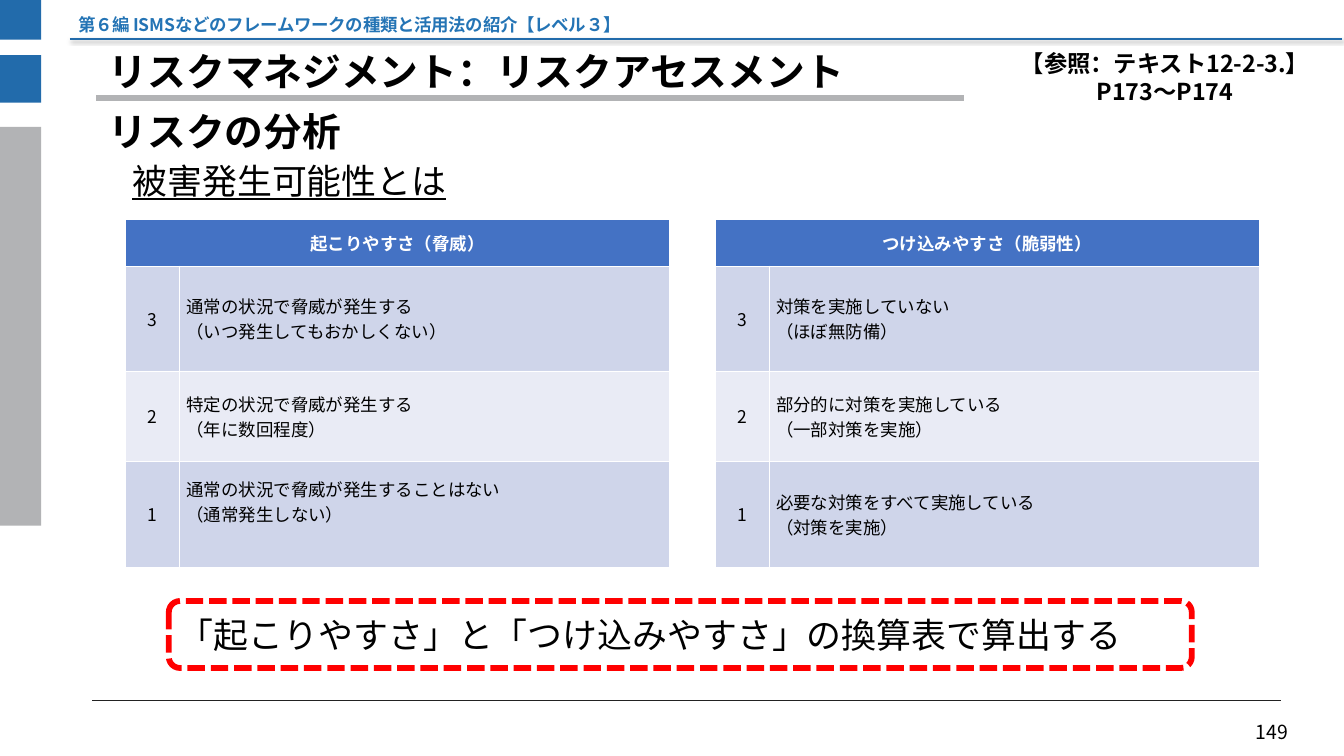
"""Builds the slide on risk analysis: likelihood of damage."""
import lxml.etree
import pptx
import pptx.dml.color
import pptx.enum.dml
import pptx.enum.shapes
import pptx.enum.text
import pptx.oxml
import pptx.oxml.ns
import pptx.util

Pt = pptx.util.Pt
RGB = pptx.dml.color.RGBColor
Align = pptx.enum.text.PP_ALIGN
Anchor = pptx.enum.text.MSO_ANCHOR
Shape = pptx.enum.shapes.MSO_SHAPE
qn = pptx.oxml.ns.qn

FONT = "Noto Sans CJK JP"
BLACK = RGB(0x00, 0x00, 0x00)
WHITE = RGB(0xFF, 0xFF, 0xFF)
BLUE = RGB(0x22, 0x6B, 0xAB)
SKY = RGB(0x24, 0x74, 0xB5)
GREY = RGB(0xB2, 0xB3, 0xB5)
DARK = RGB(0x22, 0x22, 0x22)
RED = RGB(0xFF, 0x00, 0x00)
HEAD = RGB(0x44, 0x72, 0xC4)
BAND = RGB(0xCF, 0xD5, 0xEA)
PALE = RGB(0xE9, 0xEB, 0xF5)


def style(frame, text, size, color=BLACK, bold=False, align=Align.LEFT):
    frame.text = text
    para = frame.paragraphs[0]
    para.alignment = align
    font = para.font
    font.name, font.size, font.bold = FONT, Pt(size), bold
    font.color.rgb = color
    props = para._p.pPr.find(qn("a:defRPr"))
    lxml.etree.SubElement(props, qn("a:ea"), typeface=FONT)
    return para


def place(shape, left, top, width, height, anchor=Anchor.MIDDLE):
    shape.left, shape.top = Pt(left), Pt(top)
    shape.width, shape.height = Pt(width), Pt(height)
    frame = shape.text_frame
    frame.word_wrap = True
    frame.auto_size = pptx.enum.text.MSO_AUTO_SIZE.NONE
    frame.vertical_anchor = anchor
    return frame


deck = pptx.Presentation()
deck.slide_width, deck.slide_height = Pt(1386.72), Pt(779.76)
slide = deck.slides.add_slide(deck.slide_layouts[5])
shapes = slide.shapes

for top, height, color in [(0, 41, BLUE), (56.9, 49, BLUE), (131, 411.1, GREY)]:
    bar = shapes.add_shape(Shape.RECTANGLE, 0, Pt(top), Pt(42.5), Pt(height))
    bar.shadow.inherit = False
    bar.fill.solid()
    bar.fill.fore_color.rgb = color
    bar.line.fill.background()

rules = [(72, 1384.6, 40.3, BLUE, 2), (95, 1322, 722.9, DARK, 1),
         (99.4, 994.3, 101.5, GREY, 6)]
for left, right, y, color, width in rules:
    rule = shapes.add_connector(pptx.enum.shapes.MSO_CONNECTOR.STRAIGHT,
                                Pt(left), Pt(y), Pt(right), Pt(y))
    rule.line.color.rgb = color
    rule.line.width = Pt(width)
    effect = lxml.etree.SubElement(rule._element.spPr, qn("a:effectLst"))
    if color == BLUE:
        shade = lxml.etree.SubElement(
            effect, qn("a:outerShdw"), blurRad=str(Pt(4)), dist=str(Pt(3)),
            dir="2700000", algn="tl", rotWithShape="0")
        tint = lxml.etree.SubElement(shade, qn("a:srgbClr"), val="000000")
        lxml.etree.SubElement(tint, qn("a:alpha"), val="40000")

frame = place(shapes.title, 105.1, 54.7, 1176.5, 43.9)
para = style(frame, "リスクマネジメント：リスクアセスメント", 40, bold=True)
para.line_spacing = 0.9

frame = place(shapes.add_textbox(0, 0, 0, 0), 105.1, 115.9, 1176.5, 43.9)
para = style(frame, "リスクの分析", 40, bold=True)
para.line_spacing = 0.9

frame = place(shapes.add_textbox(0, 0, 0, 0), 80.6, 20.2, 1258.6, 18, Anchor.TOP)
frame.margin_left = frame.margin_right = frame.margin_bottom = 0
frame.margin_top = Pt(0.7)
para = style(frame, "第６編 ISMSなどのフレームワークの種類と活用法の紹介【レベル３】",
             18, SKY, True)
para.line_spacing = Pt(15)
para._p.pPr.find(qn("a:defRPr")).set("spc", "-30")

frame = place(shapes.add_textbox(0, 0, 0, 0), 129.6, 160.6, 1216.8, 51.1, Anchor.TOP)
para = style(frame, "被害発生可能性とは", 36)
para.font.underline = True

frame = place(shapes.add_textbox(0, 0, 0, 0), 1031.8, 47.5, 340.6, 65.5, Anchor.TOP)
style(frame, "【参照：テキスト12-2-3.】P173～P174", 24, bold=True, align=Align.CENTER)

frame = place(shapes.add_textbox(0, 0, 0, 0), 1251.4, 740.9, 121.7, 27.4)
style(frame, "149", 20, align=Align.CENTER)

tables = [
    (129.6, "起こりやすさ（脅威）",
     ["通常の状況で脅威が発生する\v（いつ発生してもおかしくない）",
      "特定の状況で脅威が発生する\v（年に数回程度）",
      "通常の状況で脅威が発生することはない\v（通常発生しない）"]),
    (738, "つけ込みやすさ（脆弱性）",
     ["対策を実施していない\v（ほぼ無防備）",
      "部分的に対策を実施している\v（一部対策を実施）",
      "必要な対策をすべて実施している\v（対策を実施）"]),
]
grids = []
for left, head, levels in tables:
    grid = shapes.add_table(4, 2, Pt(left), Pt(226.1), Pt(561), Pt(359)).table
    grids.append(grid)
    for col, width in zip(grid.columns, [55.5, 505.5]):
        col.width = Pt(width)
    for row, height in zip(grid.rows, [48.2, 108.7, 92.9, 109.2]):
        row.height = Pt(height)
    grid.cell(0, 0).merge(grid.cell(0, 1))
    style(grid.cell(0, 0).text_frame, head, 18, WHITE, True, Align.CENTER)
    for i, level in enumerate(levels, 1):
        style(grid.cell(i, 0).text_frame, str(4 - i), 18, align=Align.CENTER)
        style(grid.cell(i, 1).text_frame, level, 18)
    for row, color in zip(grid.rows, [HEAD, BAND, PALE, BAND]):
        for cell in row.cells:
            cell.vertical_anchor = Anchor.MIDDLE
            cell.fill.solid()
            cell.fill.fore_color.rgb = color
grids[0].cell(3, 1).margin_bottom = Pt(30)

note = shapes.add_shape(Shape.ROUNDED_RECTANGLE, 0, 0, 0, 0)
note.shadow.inherit = False
note.fill.background()
note.line.color.rgb = RED
note.line.width = Pt(6)
note.line.dash_style = pptx.enum.dml.MSO_LINE.SQUARE_DOT
frame = place(note, 174.2, 619.9, 1055.5, 69.1)
style(frame, "「起こりやすさ」と「つけ込みやすさ」の換算表で算出する", 36,
      align=Align.JUSTIFY)

deck.save("out.pptx")
